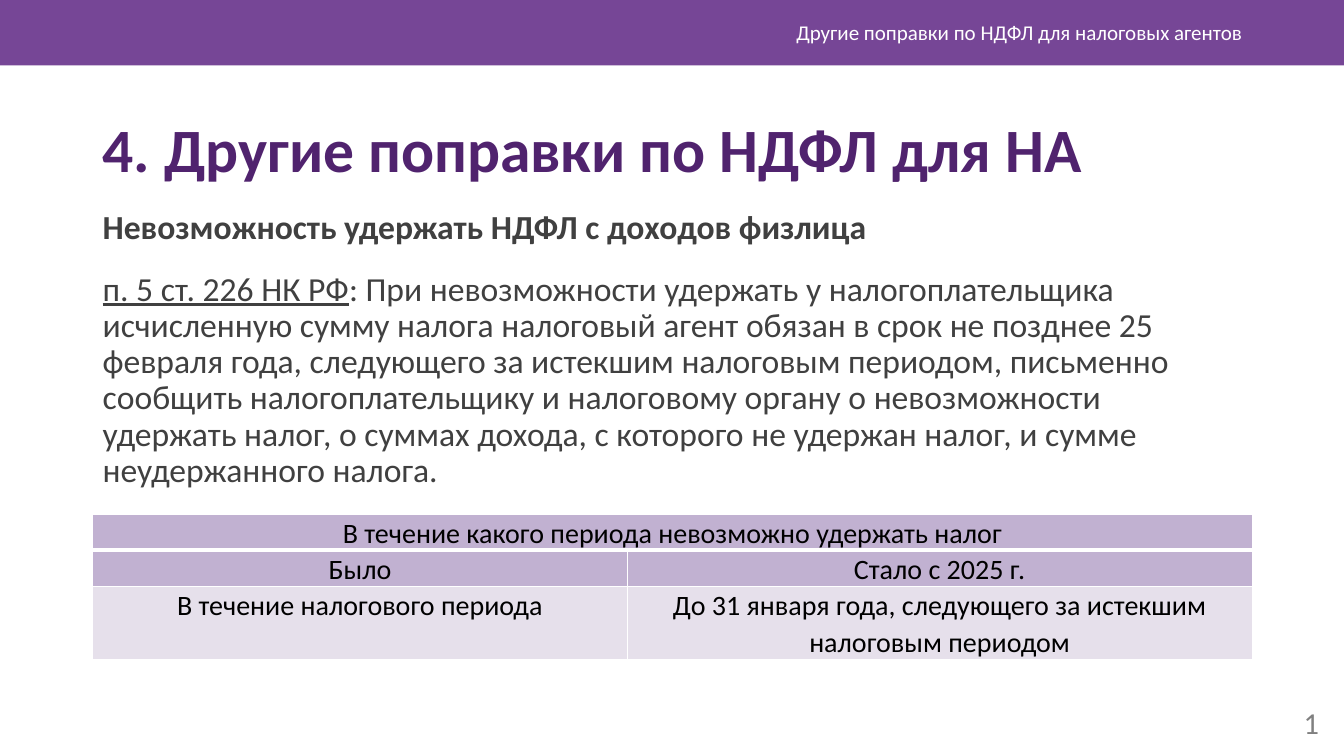
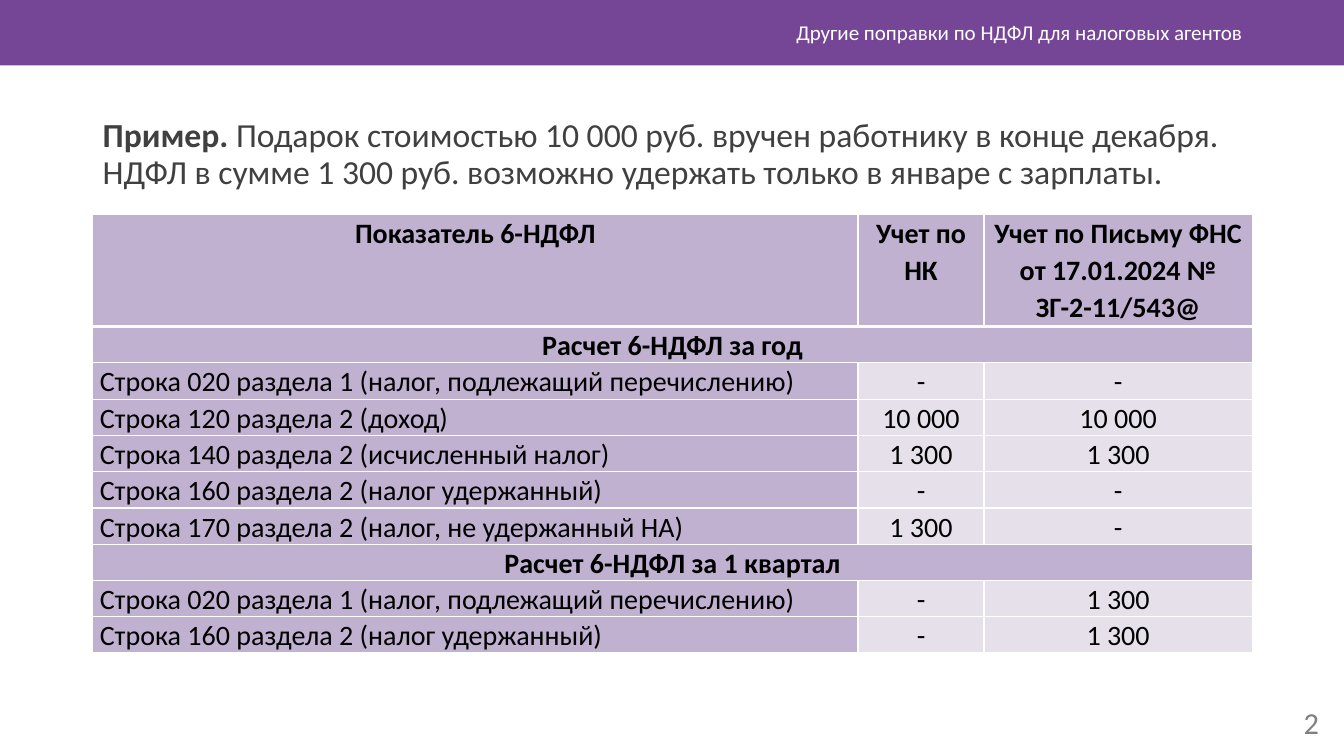
from pptx import Presentation
from pptx.dml.color import RGBColor as RGB
from pptx.enum.shapes import MSO_SHAPE as Shape
from pptx.enum.text import MSO_ANCHOR as Anchor, PP_ALIGN as Align
from pptx.util import Inches, Pt
from lxml.etree import SubElement as Sub
from pptx.oxml.ns import qn

# Shared style
FONT = "Calibri"
PURPLE = RGB(0x76, 0x46, 0x96)
DEEP = RGB(0x50, 0x23, 0x6E)
LILAC = RGB(0xC1, 0xB1, 0xD1)
PALE = RGB(0xE6, 0xE0, 0xEB)
DARK = RGB(0x40, 0x40, 0x40)
GRAY = RGB(0x80, 0x80, 0x80)
BLACK = RGB(0, 0, 0)
WHITE = RGB(0xFF, 0xFF, 0xFF)

WIDE, TALL = 13.33, 7.5
LEFT, WIDTH = 0.92, 11.5
ROW = 0.36
TOPIC = "Другие поправки по НДФЛ для налоговых агентов"


class Deck:
    def __init__(self):
        self.prs = Presentation()
        self.prs.slide_width = Inches(WIDE)
        self.prs.slide_height = Inches(TALL)
        self.slide = None

    def page(self):
        """Start a slide with its band, topic and number."""
        self.slide = self.prs.slides.add_slide(self.prs.slide_layouts[6])
        band = self.slide.shapes.add_shape(
            Shape.RECTANGLE, 0, 0, Inches(WIDE), Inches(0.65))
        band.shadow.inherit = False
        band.fill.solid()
        band.fill.fore_color.rgb = PURPLE
        band.line.fill.background()
        self.label(str(len(self.prs.slides)), 12.51, 6.97, 0.67, 21.7, GRAY)
        self.label(TOPIC, 3.54, 0.12, 8.88, 15, WHITE)

    def style(self, run, size, color, bold=False):
        font = run.font
        font.name, font.size, font.bold = FONT, Pt(size), bold
        font.color.rgb = color

    def frame(self, x, y, w, h):
        box = self.slide.shapes.add_textbox(
            Inches(x), Inches(y), Inches(w), Inches(h))
        box.text_frame.word_wrap = True
        return box.text_frame

    def label(self, text, x, y, w, size, color):
        """Right-aligned single line."""
        frame = self.frame(x, y, w, 0.4)
        frame.vertical_anchor = Anchor.MIDDLE
        frame.text = text
        par = frame.paragraphs[0]
        par.alignment = Align.RIGHT
        self.style(par.runs[0], size, color)

    def body(self, *items):
        """Each item: size, colour and (text, bold, underline) runs."""
        frame = self.frame(LEFT, 1.13, WIDTH, 5.85)
        for i, (size, color, runs) in enumerate(items):
            par = frame.add_paragraph() if i else frame.paragraphs[0]
            par.line_spacing = 0.9
            par.space_before = Pt(10 if i else 0)
            par.space_after = Pt(8)
            for text, bold, under in runs:
                run = par.add_run()
                run.text = text
                self.style(run, size, color, bold)
                run.font.underline = under

    def edges(self, cell, top, bottom):
        props = cell._tc.get_or_add_tcPr()
        for side, width in zip("LRTB", (1, 1, top, bottom)):
            line = Sub(props, qn("a:ln" + side), w=str(Pt(width)))
            fill = Sub(line, qn("a:solidFill"))
            Sub(fill, qn("a:srgbClr"), val=str(WHITE))

    def cell(self, cell, text, fill, align, bold):
        cell.margin_left = cell.margin_right = Inches(0.07)
        cell.margin_top = cell.margin_bottom = 0
        cell.fill.solid()
        cell.fill.fore_color.rgb = fill
        cell.text = text
        par = cell.text_frame.paragraphs[0]
        par.alignment, par.line_spacing = align, 1.07
        self.style(par.runs[0], 20, BLACK, bold)

    def table(self, top, cols, highs, rows, heads, bold=False, side=False):
        """A row of one text spans the table; side marks a label column."""
        grid = self.slide.shapes.add_table(
            len(rows), len(cols), Inches(LEFT), Inches(top),
            Inches(WIDTH), Inches(sum(highs))).table
        grid.first_row = grid.horz_banding = False
        for col, width in zip(grid.columns, cols):
            col.width = Inches(width)
        for r, (texts, high) in enumerate(zip(rows, highs)):
            grid.rows[r].height = Inches(high)
            for c in range(len(cols)):
                self.edges(grid.cell(r, c), 3 if r == 1 else 1,
                           3 if r == 0 else 1)
            span = len(texts) == 1
            if span:
                grid.cell(r, 0).merge(grid.cell(r, len(cols) - 1))
            head = r < heads or span
            for c, text in enumerate(texts):
                name = side and c == 0 and not head
                self.cell(grid.cell(r, c), text,
                          LILAC if head or name else PALE,
                          Align.JUSTIFY if name else Align.CENTER,
                          bold and head)


def main():
    deck = Deck()

    # Rule and its change
    deck.page()
    deck.body(
        (44, DEEP, [("4. Другие поправки по НДФЛ для НА", True, False)]),
        (24, DARK, [("Невозможность удержать НДФЛ с доходов физлица",
                     True, False)]),
        (24, DARK, [
            ("п. 5 ст. 226 НК РФ", False, True),
            (": При невозможности удержать у налогоплательщика исчисленную "
             "сумму налога налоговый агент обязан в срок не позднее 25 "
             "февраля года, следующего за истекшим налоговым периодом, "
             "письменно сообщить налогоплательщику и налоговому органу о "
             "невозможности удержать налог, о суммах дохода, с которого не "
             "удержан налог, и сумме неудержанного налога.", False, False),
        ]),
    )
    deck.table(5.1, (5.3, 6.2), (ROW, ROW, 2 * ROW), [
        ("В течение какого периода невозможно удержать налог",),
        ("Было", "Стало с 2025 г."),
        ("В течение налогового периода",
         "До 31 января года, следующего за истекшим налоговым периодом"),
    ], heads=2)

    # Worked example
    deck.page()
    deck.body((24, DARK, [
        ("Пример. ", True, False),
        ("Подарок стоимостью 10 000 руб. вручен работнику в конце декабря. "
         "НДФЛ в сумме 1 300 руб. возможно удержать только в январе с "
         "зарплаты.", False, False),
    ]))
    due = "Строка 020 раздела 1 (налог, подлежащий перечислению)"
    held = "Строка 160 раздела 2 (налог удержанный)"
    rows = [
        ("Показатель 6-НДФЛ", "Учет по НК",
         "Учет по Письму ФНС от 17.01.2024 № ЗГ-2-11/543@"),
        ("Расчет 6-НДФЛ за год",),
        (due, "-", "-"),
        ("Строка 120 раздела 2 (доход)", "10 000", "10 000"),
        ("Строка 140 раздела 2 (исчисленный налог)", "1 300", "1 300"),
        (held, "-", "-"),
        ("Строка 170 раздела 2 (налог, не удержанный НА)", "1 300", "-"),
        ("Расчет 6-НДФЛ за 1 квартал",),
        (due, "-", "1 300"),
        (held, "-", "1 300"),
    ]
    deck.table(2.13, (7.59, 1.25, 2.66), [1.11] + [ROW] * (len(rows) - 1),
               rows, heads=1, bold=True, side=True)

    deck.prs.save("out.pptx")


if __name__ == "__main__":
    main()
